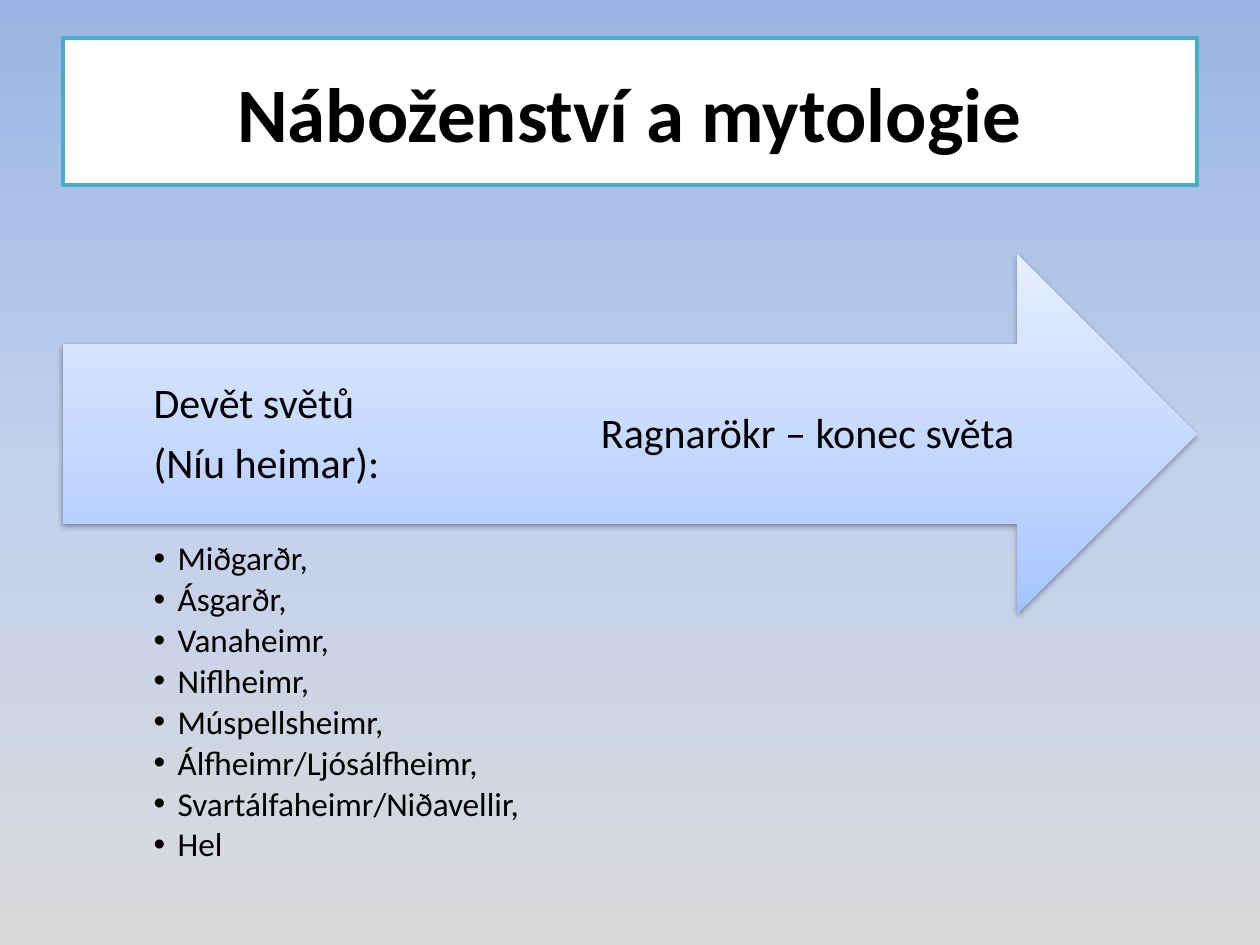
from dataclasses import dataclass

from lxml import etree
from pptx import Presentation
from pptx.dml.color import RGBColor
from pptx.enum import shapes, text
from pptx.oxml import ns
from pptx.util import Inches, Pt


@dataclass(frozen=True)
class Theme:
    font: str = "Calibri"
    ink: str = "000000"
    panel: str = "FFFFFF"
    border: str = "4BACC6"
    sky: tuple = ((0, "9AB5E4"), (50, "C2D1ED"), (100, "D9D9D9"))
    arrow: tuple = ((0, "A4C4FF"), (35, "BFD4FF"), (100, "E6EEFF"))
    title_size: int = 44
    heading_size: int = 24
    list_size: int = 19


theme = Theme()


def paint_gradient(fill, element, stops, angle):
    """Fill with any number of (percent, colour) stops; angle runs clockwise."""
    fill.gradient()
    stop_list = next(element.iter(ns.qn("a:gsLst")))
    for stop in list(stop_list):
        stop_list.remove(stop)
    for percent, color in stops:
        stop = etree.SubElement(stop_list, ns.qn("a:gs"), pos=str(percent * 1000))
        etree.SubElement(stop, ns.qn("a:srgbClr"), val=color)
    next(element.iter(ns.qn("a:lin"))).set("ang", str(angle * 60000))


def write(box, lines, *, size, bold=False, align=text.PP_ALIGN.LEFT,
          anchor=text.MSO_ANCHOR.MIDDLE, inset=None, spacing=None, gap=0, bullet_indent=None):
    """Write one paragraph per line; gap is the space after, as a share of the size."""
    frame = box.text_frame
    frame.word_wrap = True
    frame.vertical_anchor = anchor
    if inset is not None:
        frame.margin_left = frame.margin_right = 0
        frame.margin_top = frame.margin_bottom = Inches(inset)
    for number, line in enumerate(lines):
        para = frame.add_paragraph() if number else frame.paragraphs[0]
        para.alignment = align
        para.space_after = Pt(size * gap)
        if spacing:
            para.line_spacing = spacing
        if bullet_indent:
            para.level = 1
            props = para._p.get_or_add_pPr()
            props.set("marL", str(Inches(bullet_indent)))
            props.set("indent", str(-Inches(bullet_indent)))
            etree.SubElement(props, ns.qn("a:buFont"), typeface="Arial")
            etree.SubElement(props, ns.qn("a:buChar"), char="•")
        span = para.add_run()
        span.text = line
        span.font.name = theme.font
        span.font.size = Pt(size)
        span.font.bold = bold
        span.font.color.rgb = RGBColor.from_string(theme.ink)


# Deck and background
deck = Presentation()
deck.slide_width, deck.slide_height = Inches(10), Inches(7.5)
page = deck.slides.add_slide(deck.slide_layouts[6])
paint_gradient(page.background.fill, page.element, theme.sky, 90)

# Title panel
title = page.shapes.add_shape(shapes.MSO_SHAPE.RECTANGLE,
                              Inches(0.5), Inches(0.3), Inches(9), Inches(1.17))
title.shadow.inherit = False
title.fill.solid()
title.fill.fore_color.rgb = RGBColor.from_string(theme.panel)
title.line.color.rgb = RGBColor.from_string(theme.border)
title.line.width = Pt(2)
write(title, ["Náboženství a mytologie"], size=theme.title_size, bold=True,
      align=text.PP_ALIGN.CENTER)

# Arrow with a soft shadow below it
arrow = page.shapes.add_shape(shapes.MSO_SHAPE.RIGHT_ARROW,
                              Inches(0.5), Inches(2.02), Inches(9), Inches(2.85))
paint_gradient(arrow.fill, arrow.element, theme.arrow, 270)
arrow.line.fill.background()
arrow.shadow.inherit = False
effects = next(arrow.element.iter(ns.qn("a:effectLst")))
shadow = etree.SubElement(effects, ns.qn("a:outerShdw"), blurRad=str(Pt(3.1)),
                          dist=str(Pt(1.6)), dir=str(90 * 60000), rotWithShape="0")
shade = etree.SubElement(shadow, ns.qn("a:srgbClr"), val=theme.ink)
etree.SubElement(shade, ns.qn("a:alpha"), val="38000")

# Headings on the arrow
for left, width, lines in (
    (4.77, 3.83, ["Ragnarökr – konec světa"]),
    (1.22, 2.96, ["Devět světů", "(Níu heimar):"]),
):
    heading = page.shapes.add_textbox(Inches(left), Inches(2.74), Inches(width), Inches(1.43))
    write(heading, lines, size=theme.heading_size, inset=0.27, spacing=0.9, gap=0.35)

# List of worlds
worlds = ["Miðgarðr,", "Ásgarðr,", "Vanaheimr,", "Niflheimr,", "Múspellsheimr,",
          "Álfheimr/Ljósálfheimr,", "Svartálfaheimr/Niðavellir,", "Hel"]
world_list = page.shapes.add_textbox(Inches(1.22), Inches(4.3), Inches(2.96), Inches(2.72))
write(world_list, worlds, size=theme.list_size, anchor=text.MSO_ANCHOR.TOP,
      inset=0, spacing=0.9, gap=0.15, bullet_indent=0.19)

deck.save("out.pptx")
